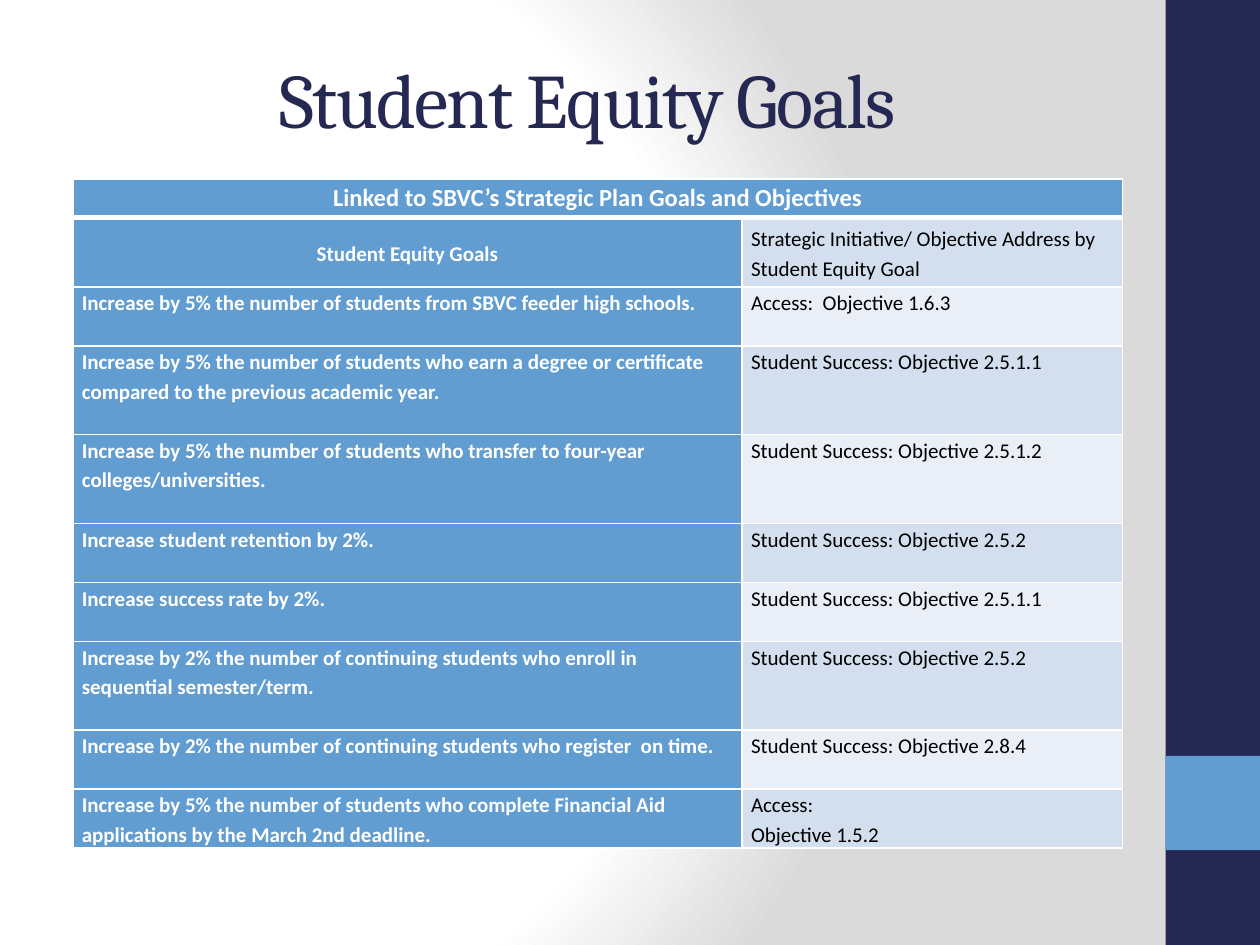
"""Build the Student Equity Goals slide."""
from dataclasses import dataclass

from pptx import Presentation
from pptx.dml.color import RGBColor
from pptx.enum.shapes import MSO_SHAPE as Preset
from pptx.enum.text import MSO_ANCHOR as Anchor, PP_ALIGN as Align
from pptx.oxml import parse_xml
from pptx.oxml.ns import nsdecls
from pptx.slide import Slide
from pptx.table import _Cell as Cell
from pptx.util import Cm, Pt

NAVY = RGBColor(0x24, 0x28, 0x52)
BLUE = RGBColor(0x62, 0x9D, 0xD1)
PALE = RGBColor(0xD3, 0xDF, 0xEE)
PALER = RGBColor(0xEA, 0xEF, 0xF7)
WHITE = RGBColor(0xFF, 0xFF, 0xFF)
BLACK = RGBColor(0, 0, 0)
GRAY = RGBColor(0xDA, 0xDA, 0xDA)
LINE_HEIGHT = 0.595


@dataclass(frozen=True)
class Bar:
    top: float
    height: float
    color: RGBColor


@dataclass(frozen=True)
class Goal:
    text: str
    objective: str
    lines: int = 2


@dataclass(frozen=True)
class CellStyle:
    fill: RGBColor
    color: RGBColor = WHITE
    bold: bool = True
    size: int = 12
    align: Align = Align.LEFT
    anchor: Anchor = Anchor.TOP
    top_border: int = 1
    bottom_border: int = 1


BARS = [Bar(0, 19.05, NAVY), Bar(15.24, 1.9, BLUE)]
GOALS = [
    Goal("Increase by 5% the number of students from SBVC feeder high schools.",
         "Access:  Objective 1.6.3"),
    Goal("Increase by 5% the number of students who earn a degree or certificate "
         "compared to the previous academic year.",
         "Student Success: Objective 2.5.1.1", 3),
    Goal("Increase by 5% the number of students who transfer to four-year "
         "colleges/universities.", "Student Success: Objective 2.5.1.2", 3),
    Goal("Increase student retention by 2%.", "Student Success: Objective 2.5.2"),
    Goal("Increase success rate by 2%.", "Student Success: Objective 2.5.1.1"),
    Goal("Increase by 2% the number of continuing students who enroll in "
         "sequential semester/term.", "Student Success: Objective 2.5.2", 3),
    Goal("Increase by 2% the number of continuing students who register  on time.",
         "Student Success: Objective 2.8.4"),
    Goal("Increase by 5% the number of students who complete Financial Aid "
         "applications by the March 2nd deadline.", "Access:\nObjective 1.5.2"),
]


def set_background(slide: Slide) -> None:
    stops = "".join(
        f'<a:gs pos="{position}"><a:srgbClr val="{color}"/></a:gs>'
        for position, color in ((0, WHITE), (75000, WHITE), (100000, GRAY)))
    slide.element.cSld.insert(0, parse_xml(
        f'<p:bg {nsdecls("p", "a")}><p:bgPr><a:gradFill rotWithShape="1">'
        f'<a:gsLst>{stops}</a:gsLst><a:path path="circle">'
        '<a:fillToRect l="20000" t="50000" r="100000" b="50000"/></a:path>'
        '</a:gradFill><a:effectLst/></p:bgPr></p:bg>'))


def add_bar(slide: Slide, bar: Bar) -> None:
    shape = slide.shapes.add_shape(
        Preset.RECTANGLE, Cm(23.5), Cm(bar.top), Cm(1.9), Cm(bar.height))
    shape.shadow.inherit = False
    shape.fill.solid()
    shape.fill.fore_color.rgb = bar.color
    shape.line.fill.background()


def set_title(slide: Slide, text: str) -> None:
    title = slide.shapes.title
    title.left, title.top, title.width, title.height = Cm(1.27), Cm(0.76), Cm(21.16), Cm(2.41)
    title.text_frame.text = text
    title.text_frame.vertical_anchor = Anchor.MIDDLE
    paragraph = title.text_frame.paragraphs[0]
    paragraph.alignment = Align.CENTER
    paragraph.font.name = "Cambria"
    paragraph.font.size = Pt(44)
    paragraph.font.color.rgb = NAVY
    paragraph.runs[0]._r.get_or_add_rPr().set("spc", "-100")


def set_borders(cell: Cell, style: CellStyle) -> None:
    properties = cell._tc.get_or_add_tcPr()
    widths = {"L": 1, "R": 1, "T": style.top_border, "B": style.bottom_border}
    for side, width in widths.items():
        properties.append(parse_xml(
            f'<a:ln{side} {nsdecls("a")} w="{Pt(width)}"><a:solidFill>'
            f'<a:srgbClr val="{WHITE}"/></a:solidFill></a:ln{side}>'))


def fill_cell(cell: Cell, text: str, style: CellStyle) -> None:
    set_borders(cell, style)
    cell.fill.solid()
    cell.fill.fore_color.rgb = style.fill
    cell.margin_left = cell.margin_right = Cm(0.18)
    cell.margin_top = cell.margin_bottom = 0
    cell.vertical_anchor = style.anchor
    cell.text_frame.text = text
    for paragraph in cell.text_frame.paragraphs:
        paragraph.alignment = style.align
        paragraph.line_spacing = 1.15
        paragraph.font.name = "Calibri"
        paragraph.font.size = Pt(style.size)
        paragraph.font.bold = style.bold
        paragraph.font.color.rgb = style.color


def add_goal_table(slide: Slide) -> None:
    heights = [0.78, 1.4] + [goal.lines * LINE_HEIGHT for goal in GOALS]
    table = slide.shapes.add_table(
        len(heights), 2, Cm(1.47), Cm(3.61), Cm(21.16), Cm(sum(heights))).table
    for column, width in zip(table.columns, (13.49, 7.67)):
        column.width = Cm(width)
    for row, height in zip(table.rows, heights):
        row.height = Cm(height)

    banner = CellStyle(BLUE, size=14, align=Align.CENTER, bottom_border=3)
    fill_cell(table.cell(0, 0), "Linked to SBVC’s Strategic Plan Goals and Objectives", banner)
    set_borders(table.cell(0, 1), banner)
    table.cell(0, 0).merge(table.cell(0, 1))
    fill_cell(table.cell(1, 0), "Student Equity Goals",
              CellStyle(BLUE, align=Align.CENTER, anchor=Anchor.MIDDLE, top_border=3))
    fill_cell(table.cell(1, 1), "Strategic Initiative/ Objective Address by Student Equity Goal",
              CellStyle(PALE, BLACK, False, anchor=Anchor.MIDDLE, top_border=3))
    for index, goal in enumerate(GOALS):
        fill_cell(table.cell(index + 2, 0), goal.text, CellStyle(BLUE))
        fill_cell(table.cell(index + 2, 1), goal.objective,
                  CellStyle(PALE if index % 2 else PALER, BLACK, False))


def main() -> None:
    presentation = Presentation()
    presentation.slide_width, presentation.slide_height = Cm(25.4), Cm(19.05)
    slide = presentation.slides.add_slide(presentation.slide_layouts[5])
    set_background(slide)
    for bar in BARS:
        add_bar(slide, bar)
    set_title(slide, "Student Equity Goals")
    add_goal_table(slide)
    presentation.save("out.pptx")


if __name__ == "__main__":
    main()
